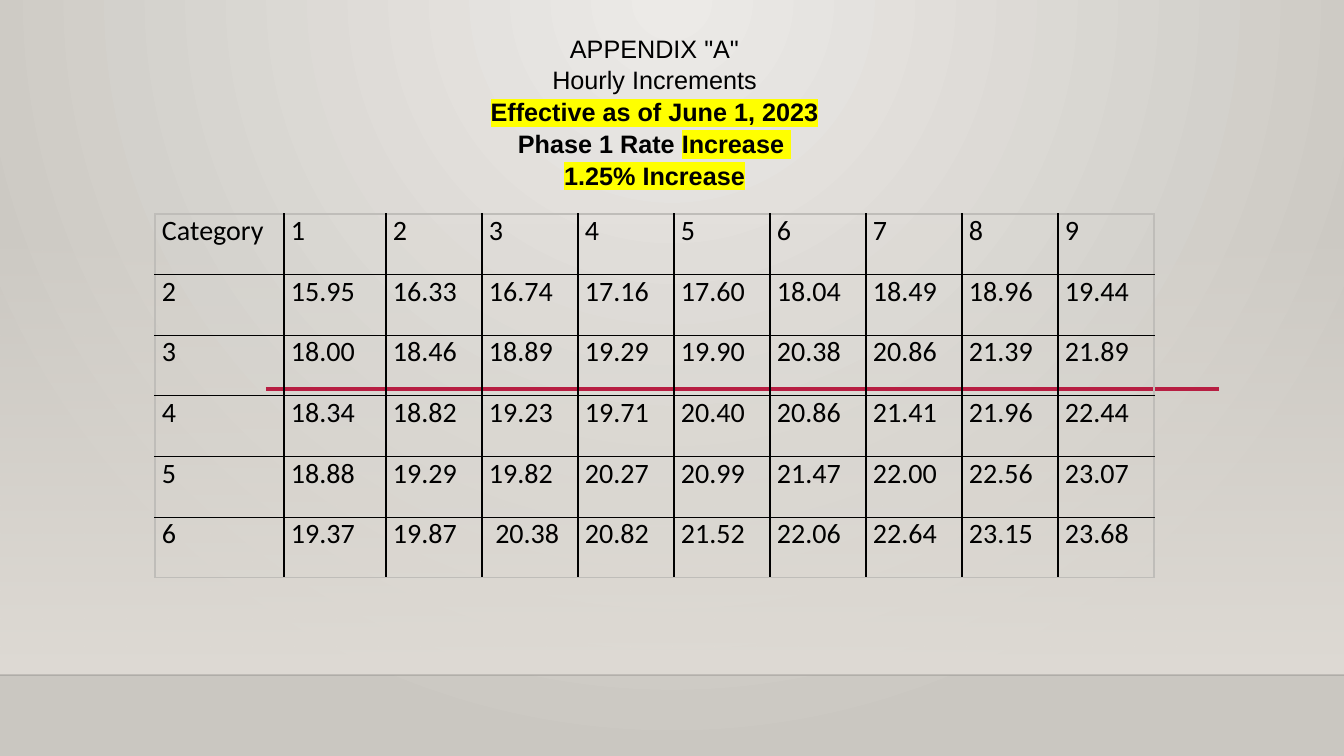
from typing import NamedTuple, Optional

from lxml.etree import SubElement
from pptx import Presentation
from pptx.dml.color import RGBColor
from pptx.enum.shapes import MSO_CONNECTOR as Conn, MSO_SHAPE as Shape
from pptx.enum.text import MSO_ANCHOR as Anchor, PP_ALIGN as Align
from pptx.oxml.ns import qn
from pptx.util import Emu, Pt

PX = 914400 / 100.8  # EMU in one px
BLACK = RGBColor(0x00, 0x00, 0x00)
RULE = RGBColor(0x00, 0x00, 0x01)
CRIMSON = RGBColor(0xB7, 0x1E, 0x42)
YELLOW = RGBColor(0xFF, 0xFF, 0x00)
EDGE = RGBColor(0xBF, 0xBD, 0xB9)
WALL_LIGHT = RGBColor(0xEC, 0xEA, 0xE7)
WALL_DARK = RGBColor(0xCA, 0xC7, 0xC1)
SHADE = RGBColor(0xDF, 0xDB, 0xD5)


class Part(NamedTuple):
    text: str
    bold: bool = False
    mark: bool = False


class Line(NamedTuple):
    x1: int
    x2: int
    y: int
    color: RGBColor
    width: float
    alpha: Optional[int] = None


HEADING = [
    [Part('APPENDIX "A"')],
    [Part("Hourly Increments")],
    [Part("Effective as of June 1, 2023", True, True)],
    [Part("Phase 1 Rate ", True), Part("Increase ", True, True),
     Part("\n"), Part("1.25% Increase", True, True)],
]
LINES = [
    Line(0, 1344, 675, RULE, 1, 20),
    Line(266, 1219, 389, CRIMSON, 2.5),
]
RATES = [
    ["Category", "1", "2", "3", "4", "5", "6", "7", "8", "9"],
    ["2", "15.95", "16.33", "16.74", "17.16", "17.60", "18.04", "18.49", "18.96", "19.44"],
    ["3", "18.00", "18.46", "18.89", "19.29", "19.90", "20.38", "20.86", "21.39", "21.89"],
    ["4", "18.34", "18.82", "19.23", "19.71", "20.40", "20.86", "21.41", "21.96", "22.44"],
    ["5", "18.88", "19.29", "19.82", "20.27", "20.99", "21.47", "22.00", "22.56", "23.07"],
    ["6", "19.37", "19.87", " 20.38", "20.82", "21.52", "22.06", "22.64", "23.15", "23.68"],
]
COLUMNS = [129, 102] + [96] * 8
TABLE_HEIGHT = 364


def px(n: float) -> Emu:
    return Emu(round(n * PX))


def set_alpha(color_el, percent: int) -> None:
    SubElement(color_el, qn("a:alpha"), val=str(percent * 1000))


def set_font(r, name: str, size: int, bold: bool = False) -> None:
    r.font.name, r.font.size, r.font.bold = name, Pt(size), bold
    r.font.color.rgb = BLACK


def set_stops(fill, first: RGBColor, last: RGBColor) -> None:
    fill.gradient()
    for stop, color in zip(fill.gradient_stops, (first, last)):
        stop.color.rgb = color


def draw_background(s) -> None:
    set_stops(s.background.fill, WALL_LIGHT, WALL_DARK)
    grad = s.element.find(".//" + qn("a:gradFill"))
    grad.remove(grad.find(qn("a:lin")))
    circle = SubElement(grad, qn("a:path"), path="circle")
    SubElement(circle, qn("a:fillToRect"), l="43000", r="43000", b="100000")

    # Wall shading that fades in towards the floor
    sp = s.shapes.add_shape(Shape.RECTANGLE, 0, px(223), px(1344), px(452))
    sp.shadow.inherit = False
    sp.line.fill.background()
    set_stops(sp.fill, SHADE, SHADE)
    sp.fill.gradient_angle = 270
    set_alpha(sp.element.find(".//" + qn("a:srgbClr")), 0)


def draw_line(s, line: Line) -> None:
    c = s.shapes.add_connector(Conn.STRAIGHT, px(line.x1), px(line.y), px(line.x2), px(line.y))
    c.line.color.rgb = line.color
    c.line.width = Pt(line.width)
    sp_pr = c.element.spPr
    if line.alpha is not None:
        set_alpha(sp_pr.find(".//" + qn("a:srgbClr")), line.alpha)
    SubElement(sp_pr, qn("a:effectLst"))


def draw_heading(s) -> None:
    tf = s.shapes.add_textbox(px(29), px(29), px(1251), px(166)).text_frame
    tf.word_wrap = True
    tf.vertical_anchor = Anchor.BOTTOM
    for i, parts in enumerate(HEADING):
        p = tf.add_paragraph() if i else tf.paragraphs[0]
        p.alignment = Align.CENTER
        p.line_spacing = 1.05
        for part in parts:
            if part.text == "\n":
                p.add_line_break()
                continue
            r = p.add_run()
            r.text = part.text
            set_font(r, "Arial", 18, part.bold)
            if part.mark:
                r_pr = r.font.fill._xPr
                mark = SubElement(r_pr, qn("a:highlight"))
                SubElement(mark, qn("a:srgbClr"), val=str(YELLOW))
                r_pr.find(qn("a:solidFill")).addnext(mark)


def set_borders(cell, outer: dict[str, bool]) -> None:
    tc_pr = cell._tc.get_or_add_tcPr()
    for i, (side, is_outer) in enumerate(outer.items()):
        ln = SubElement(tc_pr, qn("a:ln" + side), w=str(Pt(1)))
        fill = SubElement(ln, qn("a:solidFill"))
        SubElement(fill, qn("a:srgbClr"), val=str(EDGE if is_outer else BLACK))
        tc_pr.insert(i, ln)


def draw_rates(s) -> None:
    rows, cols = len(RATES), len(COLUMNS)
    table = s.shapes.add_table(rows, cols, px(155), px(214),
                               px(sum(COLUMNS)), px(TABLE_HEIGHT)).table
    table.first_row = table.horz_banding = False
    for column, width in zip(table.columns, COLUMNS):
        column.width = px(width)
    for i, values in enumerate(RATES):
        table.rows[i].height = px(TABLE_HEIGHT / rows)
        for j, value in enumerate(values):
            cell = table.cell(i, j)
            cell.text_frame.text = value
            set_font(cell.text_frame.paragraphs[0].runs[0], "Calibri", 20)
            cell.margin_left = cell.margin_right = px(7)
            cell.margin_top = cell.margin_bottom = 0
            cell.fill.background()
            set_borders(cell, {"L": j == 0, "R": j == cols - 1,
                               "T": i == 0, "B": i == rows - 1})


def main() -> None:
    prs = Presentation()
    prs.slide_width, prs.slide_height = px(1344), px(756)
    s = prs.slides.add_slide(prs.slide_layouts[6])
    draw_background(s)
    for line in LINES:
        draw_line(s, line)
    draw_heading(s)
    draw_rates(s)
    prs.save("out.pptx")


if __name__ == "__main__":
    main()
